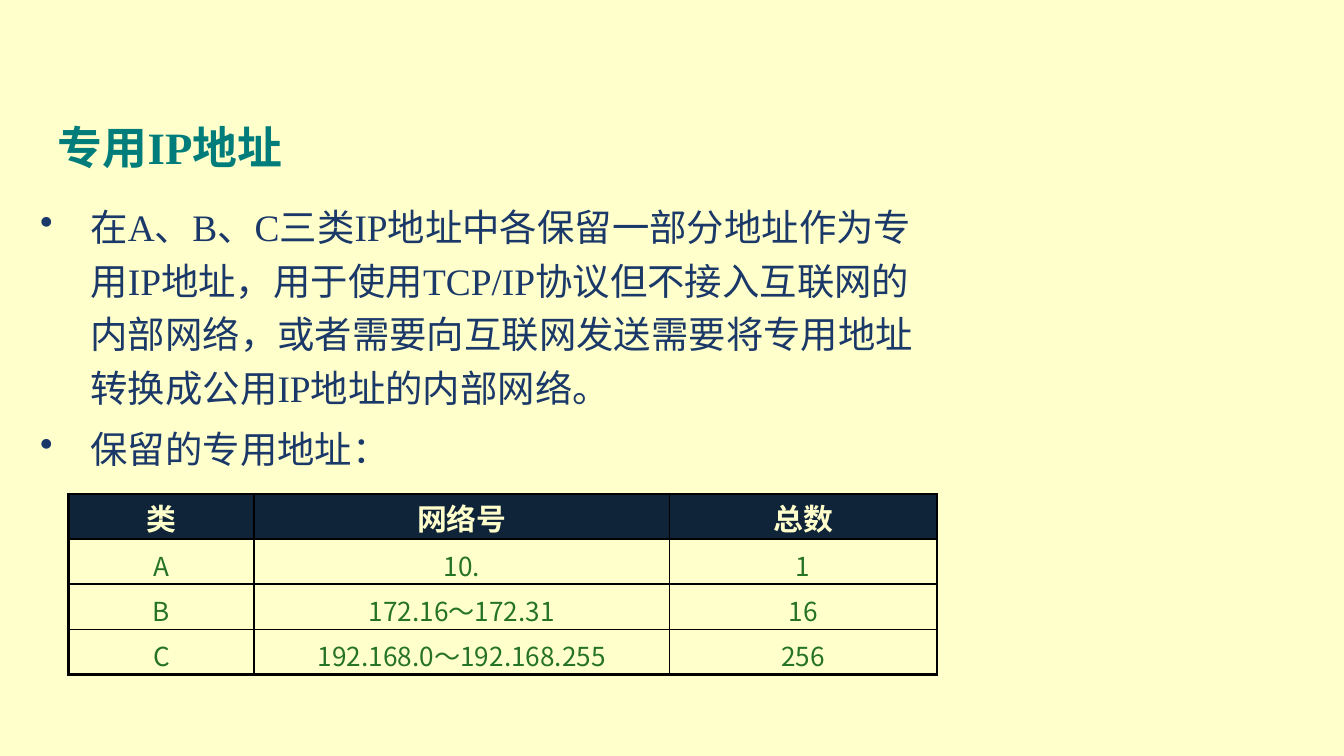
import pptx
import pptx.dml.color
import pptx.enum.text
import pptx.oxml.ns
import pptx.util
from lxml import etree

Pt = pptx.util.Pt
Align = pptx.enum.text.PP_ALIGN
Anchor = pptx.enum.text.MSO_ANCHOR
qn = pptx.oxml.ns.qn

COLORS = {
    "background": "FFFFCC",
    "title": "007D7A",
    "body": "1A3868",
    "header": "102439",
    "cell": "267326",
    "border": "000000",
}
SERIF = "Times New Roman"
SANS = "Noto Sans CJK SC"

TITLE = "专用IP地址"
BULLETS = [
    "在A、B、C三类IP地址中各保留一部分地址作为专用IP地址，用于使用TCP/IP协议但不接入互联网的内部网络，"
    "或者需要向互联网发送需要将专用地址转换成公用IP地址的内部网络。",
    "保留的专用地址：",
]
ADDRESS_ROWS = [
    ["类", "网络号", "总数"],
    ["A", "10.", "1"],
    ["B", "172.16～172.31", "16"],
    ["C", "192.168.0～192.168.255", "256"],
]
COLUMN_WIDTHS = [99.4, 222.5, 143.3]
ROW_HEIGHT = 24.2


def rgb(name):
    return pptx.dml.color.RGBColor.from_string(COLORS[name])


def style_font(paragraph, name, size, color, bold=False):
    font = paragraph.font
    font.name = name
    font.size = Pt(size)
    font.bold = bold
    font.color.rgb = rgb(color)


def add_text_frame(slide, left, top, width, height, anchor):
    box = slide.shapes.add_textbox(Pt(left), Pt(top), Pt(width), Pt(height))
    box.text_frame.word_wrap = True
    box.text_frame.vertical_anchor = anchor
    return box.text_frame


def add_title(slide):
    frame = add_text_frame(slide, 24, 45, 308, 67.5, Anchor.MIDDLE)
    paragraph = frame.paragraphs[0]
    paragraph.text = TITLE
    style_font(paragraph, SERIF, 24, "title", bold=True)


def add_bullets(slide):
    frame = add_text_frame(slide, 14.4, 101, 499, 160, Anchor.TOP)
    for index, text in enumerate(BULLETS):
        paragraph = frame.add_paragraph() if index else frame.paragraphs[0]
        paragraph.text = text
        paragraph.line_spacing = 1.2
        paragraph.space_before = Pt(4 if index else 0)
        properties = paragraph._p.get_or_add_pPr()
        properties.set("marL", str(Pt(27)))
        properties.set("indent", str(Pt(-27)))
        etree.SubElement(properties, qn("a:buChar"), char="•")
        style_font(paragraph, SERIF, 20, "body")


def set_border(cell, side, width):
    properties = cell._tc.get_or_add_tcPr()
    line = etree.SubElement(properties, qn(f"a:ln{side}"), w=str(Pt(width)))
    fill = etree.SubElement(line, qn("a:solidFill"))
    etree.SubElement(fill, qn("a:srgbClr"), val=COLORS["border"])


def format_cell(cell, text, row, column):
    is_header = row == 0
    thick_sides = {
        "L": column == 0,
        "R": column == len(COLUMN_WIDTHS) - 1,
        "T": row <= 1,
        "B": row in (0, len(ADDRESS_ROWS) - 1),
    }
    for side, thick in thick_sides.items():
        set_border(cell, side, 1.5 if thick else 1)
    if is_header:
        cell.fill.solid()
        cell.fill.fore_color.rgb = rgb("header")
    else:
        cell.fill.background()
    cell.margin_left = cell.margin_right = Pt(5)
    cell.margin_top = Pt(12)
    cell.margin_bottom = Pt(0)
    paragraph = cell.text_frame.paragraphs[0]
    paragraph.text = text
    paragraph.alignment = Align.CENTER
    paragraph.line_spacing = Pt(12)
    if is_header:
        style_font(paragraph, SERIF, 16, "background", bold=True)
    else:
        style_font(paragraph, SANS, 14, "cell")


def add_address_table(slide):
    frame = slide.shapes.add_table(
        len(ADDRESS_ROWS), len(COLUMN_WIDTHS), Pt(36.8), Pt(264.6),
        Pt(sum(COLUMN_WIDTHS)), Pt(ROW_HEIGHT * len(ADDRESS_ROWS)))
    table = frame.table
    table.first_row = table.horz_banding = False
    for column, width in zip(table.columns, COLUMN_WIDTHS):
        column.width = Pt(width)
    for row_index, texts in enumerate(ADDRESS_ROWS):
        table.rows[row_index].height = Pt(ROW_HEIGHT)
        for column_index, text in enumerate(texts):
            format_cell(table.cell(row_index, column_index), text, row_index, column_index)


def main():
    presentation = pptx.Presentation()
    presentation.slide_width = Pt(720)
    presentation.slide_height = Pt(405)
    slide = presentation.slides.add_slide(presentation.slide_layouts[6])
    slide.background.fill.solid()
    slide.background.fill.fore_color.rgb = rgb("background")
    add_title(slide)
    add_bullets(slide)
    add_address_table(slide)
    presentation.save("out.pptx")


if __name__ == "__main__":
    main()
